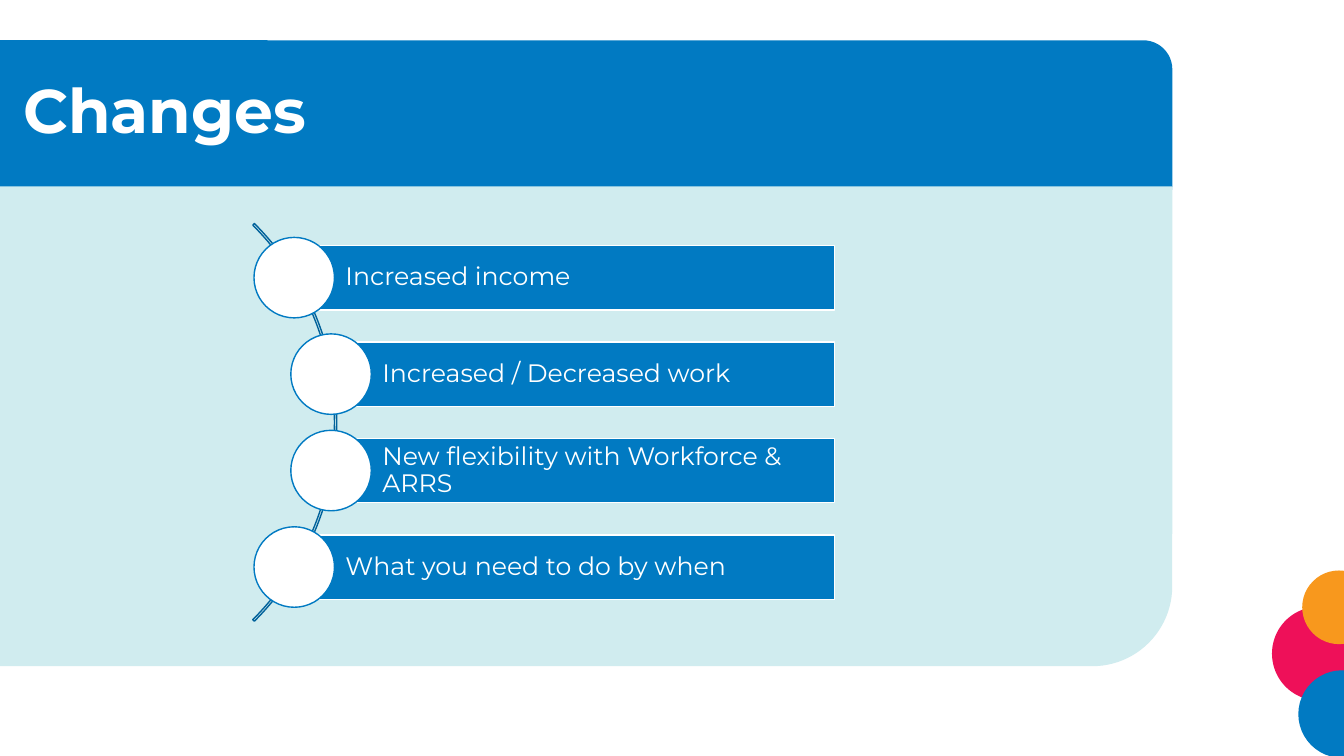
import pptx
import pptx.dml.color
import pptx.enum.shapes
import pptx.enum.text
import pptx.util

Pt = pptx.util.Pt
RGBColor = pptx.dml.color.RGBColor
Shape = pptx.enum.shapes.MSO_SHAPE
Align = pptx.enum.text.PP_ALIGN

BLUE = RGBColor(0x01, 0x7A, 0xC2)
DARK_BLUE = RGBColor(0x01, 0x62, 0x9B)
PALE_BLUE = RGBColor(0xD0, 0xEC, 0xEF)
PINK = RGBColor(0xEE, 0x10, 0x59)
ORANGE = RGBColor(0xF8, 0x98, 0x1D)
WHITE = RGBColor(0xFF, 0xFF, 0xFF)

# Content: each change with the left edge of its bar
TITLE = "Changes"
CHANGES = [
    ("Increased income", 210.2),
    ("Increased / Decreased work", 236.5),
    ("New flexibility with Workforce & ARRS", 236.5),
    ("What you need to do by when", 210.2),
]
# Corner circles: left, top, diameter, colour
CORNER_CIRCLES = [
    (908.6, 433.4, 67, PINK),
    (927.4, 478.8, 62.6, BLUE),
    (930.2, 407.5, 52.6, ORANGE),
]

# Layout of the list
LIST_MIDDLE = 301.7
ROW_PITCH = 68.9
BAR_HEIGHT = 46
BAR_RIGHT = 596
DOT_SIZE = 57.5
ARC_SIZE = 401.8
ARC_CENTRE = 39.6

presentation = pptx.Presentation()
presentation.slide_width = Pt(960)
presentation.slide_height = Pt(540)
slide = presentation.slides.add_slide(presentation.slide_layouts[5])


def add_shape(kind, left, top, width, height, fill=None, line=None):
    shape = slide.shapes.add_shape(kind, Pt(left), Pt(top), Pt(width), Pt(height))
    shape.shadow.inherit = False
    if fill is None:
        shape.fill.background()
    else:
        shape.fill.solid()
        shape.fill.fore_color.rgb = fill
    if line is None:
        shape.line.fill.background()
    else:
        shape.line.color.rgb = line
        shape.line.width = Pt(1)
    return shape


def write(shape, text, size, bold, margins):
    frame = shape.text_frame
    frame.text = text
    frame_format = {
        "word_wrap": True,
        "auto_size": pptx.enum.text.MSO_AUTO_SIZE.NONE,
        "vertical_anchor": pptx.enum.text.MSO_ANCHOR.MIDDLE,
        **margins,
    }
    for name, value in frame_format.items():
        setattr(frame, name, value)
    paragraph = frame.paragraphs[0]
    paragraph.alignment = Align.LEFT
    paragraph.line_spacing = 0.9
    font_format = {"name": "Montserrat", "size": Pt(size), "bold": bold}
    for name, value in font_format.items():
        setattr(paragraph.font, name, value)
    paragraph.font.color.rgb = WHITE


# Title band, content panel and corner circles
add_shape(Shape.ROUNDED_RECTANGLE, -28.8, 28.8, 866.2, 124.6, BLUE)
panel = add_shape(Shape.ROUND_1_RECTANGLE, -7.9, 133.2, 845.3, 342.7, PALE_BLUE)
panel.element.spPr.get_or_add_xfrm().set("flipV", "1")
for left, top, diameter, colour in CORNER_CIRCLES:
    add_shape(Shape.OVAL, left, top, diameter, diameter, colour)

# Title, brought in front of the band
title = slide.shapes.title
title_box = {"left": 9.4, "top": 28.8, "width": 828, "height": 104.4}
for name, value in title_box.items():
    setattr(title, name, Pt(value))
write(title, TITLE, 44, True, {})
title.element.getparent().append(title.element)

# Arc behind the list
arc = add_shape(Shape.BLOCK_ARC, ARC_CENTRE - ARC_SIZE / 2, LIST_MIDDLE - ARC_SIZE / 2,
                ARC_SIZE, ARC_SIZE, line=DARK_BLUE)
for index, value in enumerate((189, 27, 0.004)):
    arc.adjustments[index] = value

# Bars, each with a dot centred on its left edge
bar_margins = {"margin_left": Pt(36.6), "margin_top": Pt(3.6),
               "margin_right": Pt(3.6), "margin_bottom": Pt(3.6)}
for row, (text, left) in enumerate(CHANGES):
    middle = LIST_MIDDLE + (row - (len(CHANGES) - 1) / 2) * ROW_PITCH
    bar = add_shape(Shape.RECTANGLE, left, middle - BAR_HEIGHT / 2,
                    BAR_RIGHT - left, BAR_HEIGHT, BLUE, WHITE)
    write(bar, text, 18, False, bar_margins)
    add_shape(Shape.OVAL, left - DOT_SIZE / 2, middle - DOT_SIZE / 2,
              DOT_SIZE, DOT_SIZE, WHITE, BLUE)

presentation.save("out.pptx")
